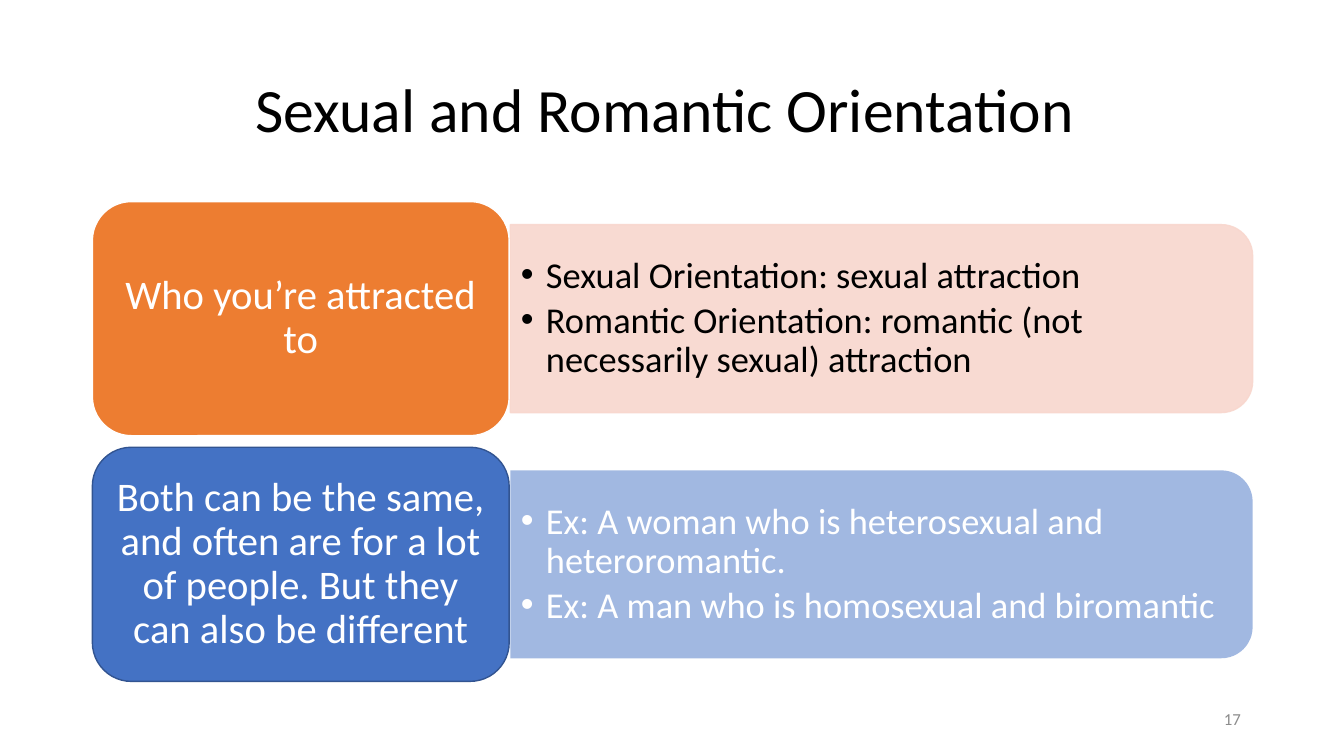
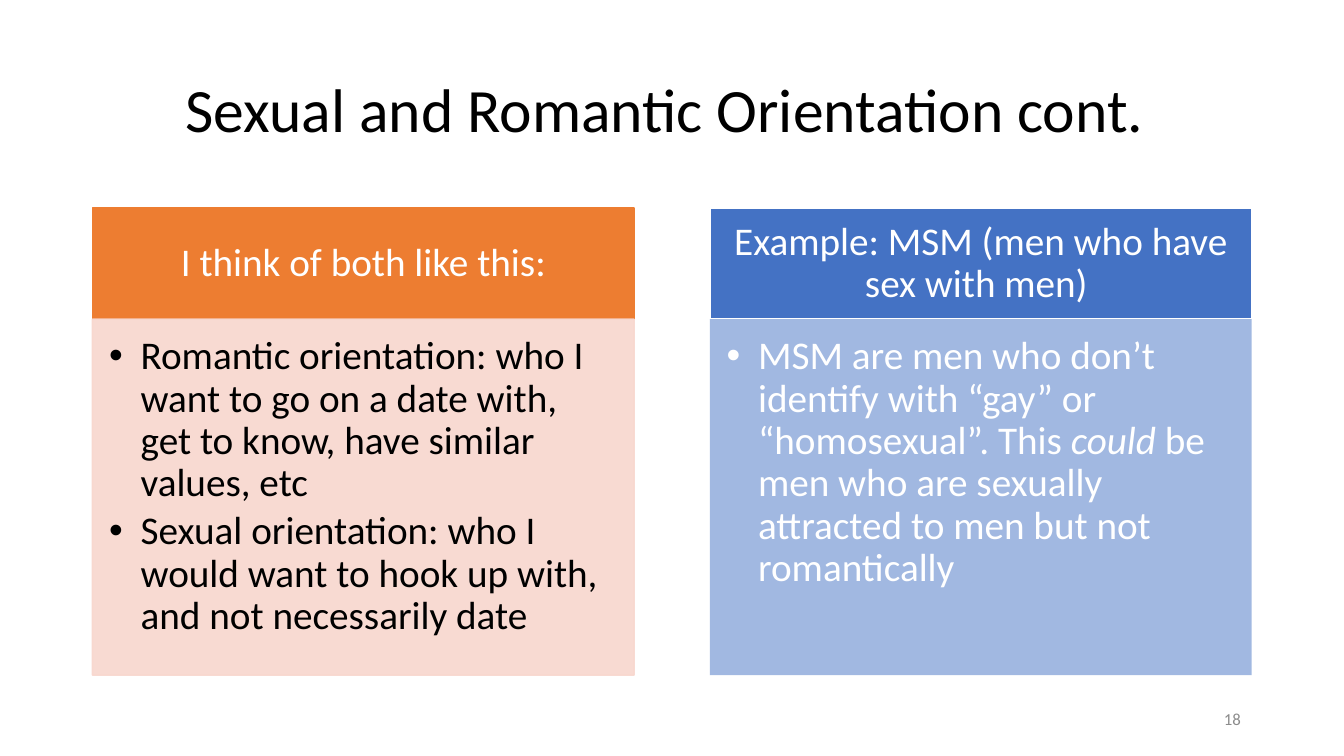
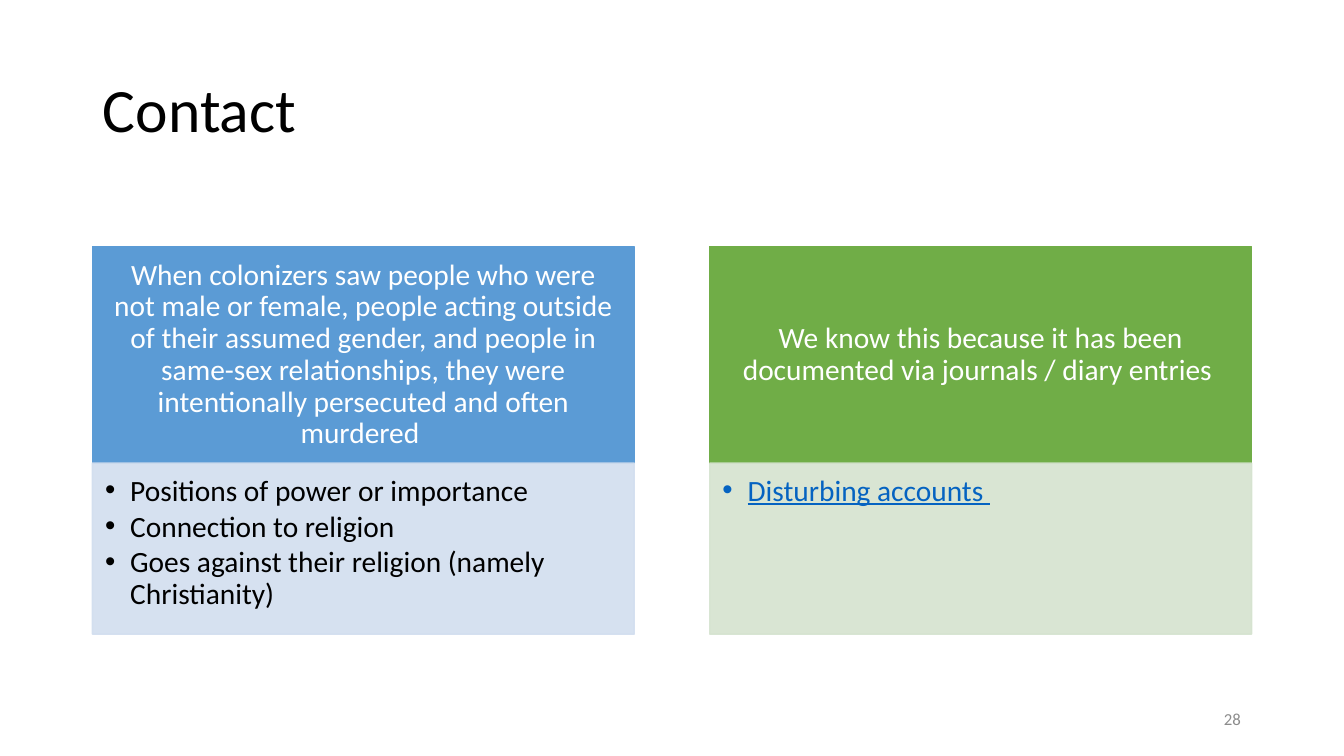
from lxml import etree
from pptx import Presentation
from pptx.dml.color import RGBColor
from pptx.enum.shapes import MSO_SHAPE
from pptx.enum.text import MSO_ANCHOR, MSO_AUTO_SIZE, PP_ALIGN
from pptx.oxml.ns import qn
from pptx.util import Pt

RECT = MSO_SHAPE.RECTANGLE
ROUND = MSO_SHAPE.ROUNDED_RECTANGLE
ROUND_TOP = MSO_SHAPE.ROUND_2_SAME_RECTANGLE
LEFT, CENTER, RIGHT = PP_ALIGN.LEFT, PP_ALIGN.CENTER, PP_ALIGN.RIGHT
TOP, MIDDLE = MSO_ANCHOR.TOP, MSO_ANCHOR.MIDDLE
NO_FIT = MSO_AUTO_SIZE.NONE

FONT = "Calibri"
BLACK, WHITE, GREY, LINK = "000000", "FFFFFF", "8C8C8C", "0563C1"
ORANGE, BLUE, NAVY = "ED7D31", "4472C4", "325491"
PEACH, SKY, PALE_SKY = "F8D7CE", "5B9BD5", "D2DEEF"
GREEN, PALE_GREEN = "70AD47", "D5E3CF"

MARGIN, CONTENT_WIDTH = 88, 1104
COLUMN_WIDTH, COLUMN_STEP = 516, 588
DEFAULT_INSETS = (10, 5, 10, 5)


def px(length):
    return int(length * 9525)


def color(value):
    return RGBColor.from_string(value)


class Deck:
    def __init__(self):
        self.deck = Presentation()
        self.deck.slide_width, self.deck.slide_height = px(1280), px(720)
        self.page = None

    def add_page(self, title, number, align=CENTER):
        self.page = self.deck.slides.add_slide(self.deck.slide_layouts[5])
        box = self.page.shapes.title
        box.left, box.top = px(MARGIN), px(38)
        box.width, box.height = px(CONTENT_WIDTH), px(139)
        self.fill_text(box, [title], 44, BLACK, align)
        self.text(904, 667, 288, 38, [number], 12, GREY, RIGHT)

    def text(self, left, top, width, height, *content, **style):
        box = self.page.shapes.add_textbox(px(left), px(top), px(width), px(height))
        self.fill_text(box, *content, **style)

    def shape(self, kind, left, top, width, height, fill, line=None, opacity=100, weight=1):
        shape = self.page.shapes.add_shape(kind, px(left), px(top), px(width), px(height))
        shape.shadow.inherit = False
        shape.fill.solid()
        shape.fill.fore_color.rgb = color(fill)
        if line:
            shape.line.color.rgb = color(line)
            shape.line.width = Pt(weight)
        else:
            shape.line.fill.background()
        if opacity < 100:
            for value in shape._element.spPr.iter(qn("a:srgbClr")):
                etree.SubElement(value, qn("a:alpha"), val=str(opacity * 1000))
        return shape

    def fill_text(self, box, paragraphs, size, ink, align=LEFT, anchor=MIDDLE,
                  insets=DEFAULT_INSETS, indent=0, underline=None):
        frame = box.text_frame
        frame.word_wrap = True
        frame.auto_size = NO_FIT
        frame.vertical_anchor = anchor
        frame.margin_left, frame.margin_top, frame.margin_right, frame.margin_bottom = map(px, insets)
        for index, content in enumerate(paragraphs):
            para = frame.add_paragraph() if index else frame.paragraphs[0]
            para.alignment = align
            para.line_spacing = 0.9
            if indent:
                para.space_after = Pt(round(size * 0.15))
                self.bullet(para, indent)
            runs = [(content, None)] if isinstance(content, str) else content
            for words, italic in runs:
                span = para.add_run()
                span.text = words
                span.font.name = FONT
                span.font.size = Pt(size)
                span.font.color.rgb = color(ink)
                span.font.italic = italic
                span.font.underline = underline

    def bullet(self, para, indent):
        properties = para._p.get_or_add_pPr()
        properties.set("marL", str(px(indent)))
        properties.set("indent", str(px(-indent)))
        etree.SubElement(properties, qn("a:buFont"), typeface="Arial")
        etree.SubElement(properties, qn("a:buChar"), char="•")

    def band(self, row, heading, points, fill, line, body, ink):
        top = 192 + row * 234
        left, width, height = 486, 707, 179
        middle_x, middle_y = left + width / 2, top + 111.5
        panel = self.shape(ROUND_TOP, middle_x - height / 2, middle_y - width / 2,
                           height, width, **body)
        panel.rotation = 90
        self.text(left, top + 31, 698, 161, points, 26, ink, indent=24)
        label = self.shape(ROUND, MARGIN, top, 397, 223, fill, line)
        self.fill_text(label, [heading], 29, WHITE, CENTER, insets=(12, 6, 12, 6))

    def column(self, index, top, heights, size, indent, heading, points, head, body, ink,
               underline=None):
        left = MARGIN + index * COLUMN_STEP
        head_height, body_height = heights
        side, edge, near, bottom = size * 3 // 4, size * 3 // 7, size * 4 // 7, size * 5 // 6
        label = self.shape(RECT, left, top, COLUMN_WIDTH, head_height, **head)
        self.fill_text(label, [heading], size, WHITE, CENTER, insets=(side, edge, side, edge))
        panel = self.shape(RECT, left, top + head_height, COLUMN_WIDTH, body_height, **body)
        self.fill_text(panel, points, size, ink, anchor=TOP, insets=(near, near, side, bottom),
                       indent=indent, underline=underline)


def solid(fill):
    return {"fill": fill, "line": fill}


def tint(fill):
    return {"fill": fill, "line": fill, "opacity": 90}


def main():
    deck = Deck()
    half_blue = {"fill": BLUE, "opacity": 50}

    deck.add_page("Sexual and Romantic Orientation ", "17")
    deck.band(0, "Who you’re attracted to",
              ["Sexual Orientation: sexual attraction",
               "Romantic Orientation: romantic (not necessarily sexual) attraction"],
              ORANGE, WHITE, tint(PEACH), BLACK)
    deck.band(1, "Both can be the same, and often are for a lot of people. "
              "But they can also be different",
              ["Ex: A woman who is heterosexual and heteroromantic.",
               "Ex: A man who is homosexual and biromantic"],
              BLUE, NAVY, half_blue, WHITE)

    deck.add_page("Sexual and Romantic Orientation cont. ", "18")
    layout = (198, (106, 339), 28, 30)
    deck.column(0, *layout, "I think of both like this:",
                ["Romantic orientation: who I want to go on a date with, get to know, "
                 "have similar values, etc",
                 "Sexual orientation: who I would want to hook up with, and not necessarily date"],
                solid(ORANGE), tint(PEACH), BLACK)
    deck.column(1, *layout, "Example: MSM (men who have sex with men) ",
                [[("MSM are men who don’t identify with “gay” or “homosexual”. This ", None),
                  ("could", True),
                  (" be men who are sexually attracted to men but not romantically", None)]],
                {"fill": BLUE, "line": WHITE, "weight": 1.5}, half_blue, WHITE)

    deck.add_page("Contact", "28", LEFT)
    layout = (235, (206, 163), 21, 24)
    deck.column(0, *layout,
                "When colonizers saw people who were not male or female, people acting outside "
                "of their assumed gender, and people in same-sex relationships, they were "
                "intentionally persecuted and often murdered ",
                ["Positions of power or importance", "Connection to religion",
                 "Goes against their religion (namely Christianity)"],
                solid(SKY), tint(PALE_SKY), BLACK)
    deck.column(1, *layout,
                "We know this because it has been documented via journals / diary entries ",
                ["Disturbing accounts "], solid(GREEN), tint(PALE_GREEN), LINK, underline=True)

    deck.deck.save("out.pptx")


if __name__ == "__main__":
    main()
